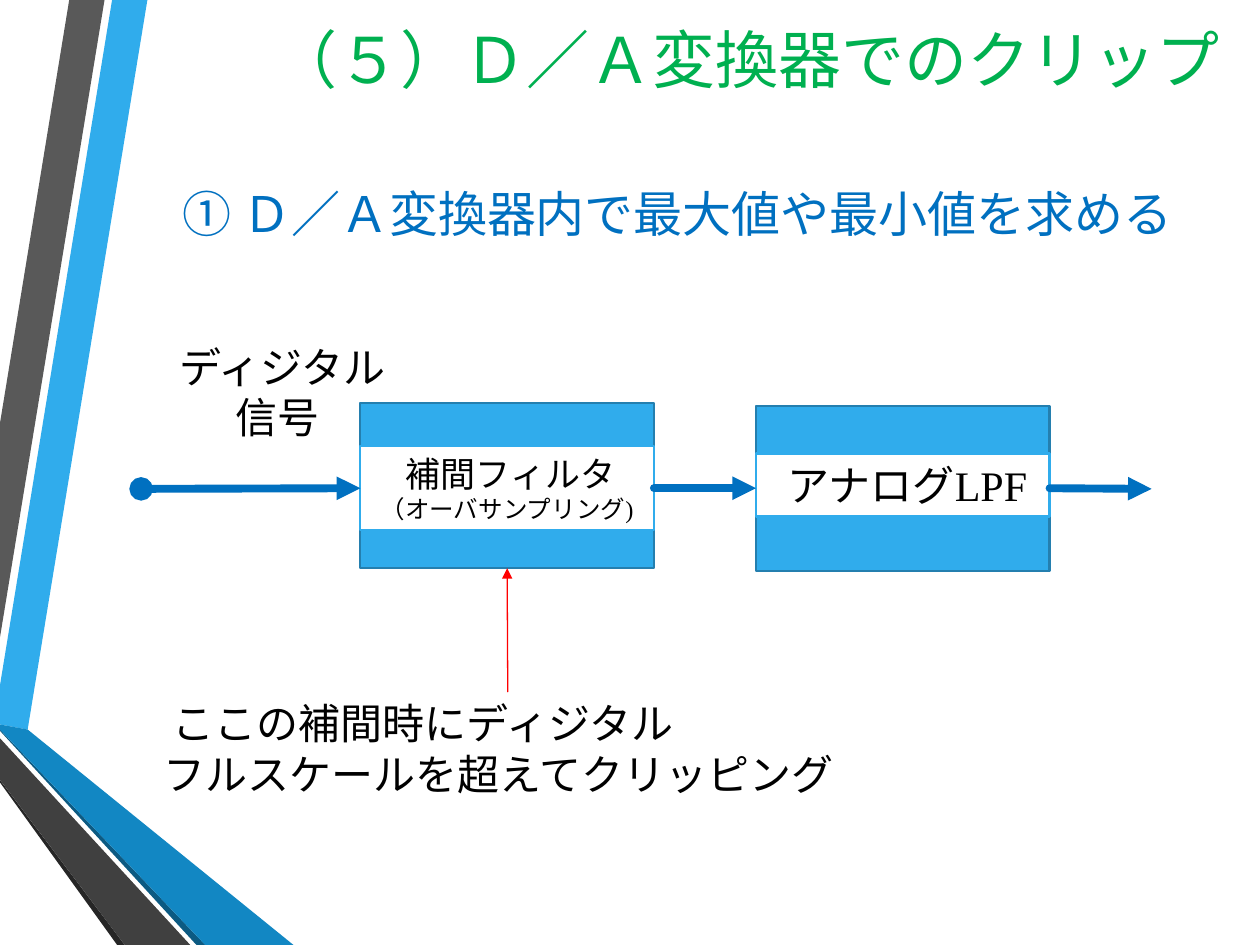
from dataclasses import dataclass

from lxml.etree import SubElement
from pptx import Presentation
from pptx.dml.color import RGBColor
from pptx.enum.shapes import MSO_CONNECTOR, MSO_SHAPE
from pptx.enum.text import MSO_ANCHOR, PP_ALIGN
from pptx.oxml.ns import qn
from pptx.util import Inches, Pt


@dataclass(frozen=True)
class Theme:
    """Fonts, type sizes and colours of the slide."""
    sans: str = "Noto Sans CJK JP"
    serif: str = "Times New Roman"
    title: int = 36
    heading: int = 28
    body: int = 24
    label: int = 20
    space: int = 18
    small: int = 14
    green: str = "00B050"
    blue: str = "0070C0"
    sky: str = "30ACEC"
    edge: str = "247FAF"
    red: str = "FF0000"
    black: str = "000000"
    white: str = "FFFFFF"


T = Theme()
BOX_W, BOX_H = 2.33, 1.31
FILTER_X, LPF_X = 2.86, 6
SIGNAL_Y = 3.88

RIBBONS = [
    (T.sky, [(0, 5.44), (0, 5.75), (0.22, 5.79), (1.17, 0), (0.89, 0)]),
    ("595959", [(0.83, 0), (0.55, 0), (0, 3.36), (0, 5.06)]),
    ("262626", [(0, 6.19), (0, 6.21), (0.93, 7.5), (0.99, 7.5)]),
    ("0C5A82", [(0, 5.79), (0, 5.8), (1.56, 7.5), (1.63, 7.5)]),
    ("1287C3", [(0, 5.79), (1.63, 7.5), (2.33, 7.5), (0.22, 5.79), (0, 5.75)]),
    ("404040", [(0, 6.19), (0.99, 7.5), (1.51, 7.5), (0, 5.86)]),
]


def paint(sp, fill, line=None):
    """Give a shape a flat fill and an optional outline."""
    sp.shadow.inherit = False
    sp.fill.solid()
    sp.fill.fore_color.rgb = RGBColor.from_string(fill)
    if line:
        sp.line.color.rgb = RGBColor.from_string(line)
        sp.line.width = Pt(1.25)
    else:
        sp.line.fill.background()


def add_ribbon(slide, color, points):
    """Draw one polygon of the side decoration."""
    pts = [(Inches(x), Inches(y)) for x, y in points]
    builder = slide.shapes.build_freeform(*pts[0])
    builder.add_line_segments(pts[1:], close=True)
    paint(builder.convert_to_shape(), color)


def set_text(sp, paragraphs, color=T.black, font=T.serif,
             align=PP_ALIGN.LEFT, anchor=MSO_ANCHOR.TOP):
    """Fill a shape with paragraphs, each a list of (text, size) runs."""
    tf = sp.text_frame
    tf.word_wrap = True
    tf.vertical_anchor = anchor
    for i, runs in enumerate(paragraphs):
        p = tf.add_paragraph() if i else tf.paragraphs[0]
        p.alignment = align
        for text, size in runs:
            r = p.add_run()
            r.text = text
            r.font.size = Pt(size)
            r.font.name = font
            r.font.color.rgb = RGBColor.from_string(color)
            SubElement(r.font._element, qn("a:ea"), typeface=T.sans)


def add_text(slide, box, paragraphs, **style):
    """Add a text box."""
    sp = slide.shapes.add_textbox(*map(Inches, box))
    set_text(sp, paragraphs, **style)


def add_box(slide, x, y, h, fill, line, paragraphs=()):
    """Add a block rectangle or the label band that lies on it."""
    sp = slide.shapes.add_shape(
        MSO_SHAPE.RECTANGLE, Inches(x), Inches(y), Inches(BOX_W), Inches(h))
    paint(sp, fill, line)
    set_text(sp, paragraphs, align=PP_ALIGN.CENTER)
    return sp


def add_arrow(slide, start, end, color, width, source=None, target=None, head=None):
    """Add an arrow; source and target are (shape, side) pairs to join."""
    cx = slide.shapes.add_connector(
        MSO_CONNECTOR.STRAIGHT, *map(Inches, start + end))
    if source:
        cx.begin_connect(*source)
    if target:
        cx.end_connect(*target)
    cx.line.color.rgb = RGBColor.from_string(color)
    cx.line.width = Pt(width)
    ln = cx.line._get_or_add_ln()
    ln.set("cap", "rnd")
    if head:
        SubElement(ln, qn("a:headEnd"), type=head)
    SubElement(ln, qn("a:tailEnd"), type="triangle")
    SubElement(cx._element.spPr, qn("a:effectLst"))


def add_diagram(slide):
    """Draw the two converter stages and the signal path."""
    filter_box = add_box(slide, FILTER_X, 3.2, BOX_H, T.sky, T.edge)
    lpf_box = add_box(slide, LPF_X, 3.22, BOX_H, T.sky, T.edge)
    filter_label = add_box(
        slide, FILTER_X, 3.54, 0.67, T.white, T.sky,
        [[(" ", T.space), ("補間フィルタ", T.label)],
         [("（オーバサンプリング)", T.small)]])
    add_box(slide, LPF_X, 3.6, 0.5, T.white, T.sky, [[(" アナログLPF", T.body)]])

    add_arrow(slide, (1.12, SIGNAL_Y), (FILTER_X, SIGNAL_Y), T.blue, 4.5,
              target=(filter_label, 1), head="oval")
    add_arrow(slide, (FILTER_X + BOX_W, SIGNAL_Y), (LPF_X, SIGNAL_Y), T.blue, 4.5,
              source=(filter_label, 3), target=(lpf_box, 1))
    add_arrow(slide, (LPF_X + BOX_W, SIGNAL_Y), (9.14, SIGNAL_Y), T.blue, 4.5,
              source=(lpf_box, 3))
    add_arrow(slide, (4.03, 5.49), (4.02, 4.51), T.red, 0.75,
              target=(filter_box, 2))


def main():
    """Build and save the slide."""
    prs = Presentation()
    prs.slide_width, prs.slide_height = Inches(10), Inches(7.5)
    slide = prs.slides.add_slide(prs.slide_layouts[6])
    for color, points in RIBBONS:
        add_ribbon(slide, color, points)
    add_text(slide, (1.35, -0.03, 8.43, 0.99),
             [[("（５）Ｄ／Ａ変換器でのクリップ", T.title)]], color=T.green,
             font=T.sans, align=PP_ALIGN.RIGHT, anchor=MSO_ANCHOR.MIDDLE)
    add_text(slide, (1.35, 1.41, 8.33, 0.57),
             [[("① Ｄ／Ａ変換器内で最大値や最小値を求める", T.heading)]],
             color=T.blue, font=T.sans)
    add_diagram(slide)
    add_text(slide, (1.2, 5.49, 5.66, 0.91),
             [[(" ここの補間時にディジタル", T.body)],
              [("フルスケールを超えてクリッピング", T.body)]])
    add_text(slide, (1.04, 2.66, BOX_W, 0.91),
             [[(" ディジタル", T.body)], [("信号", T.body)]],
             align=PP_ALIGN.CENTER)
    prs.save("out.pptx")


if __name__ == "__main__":
    main()
